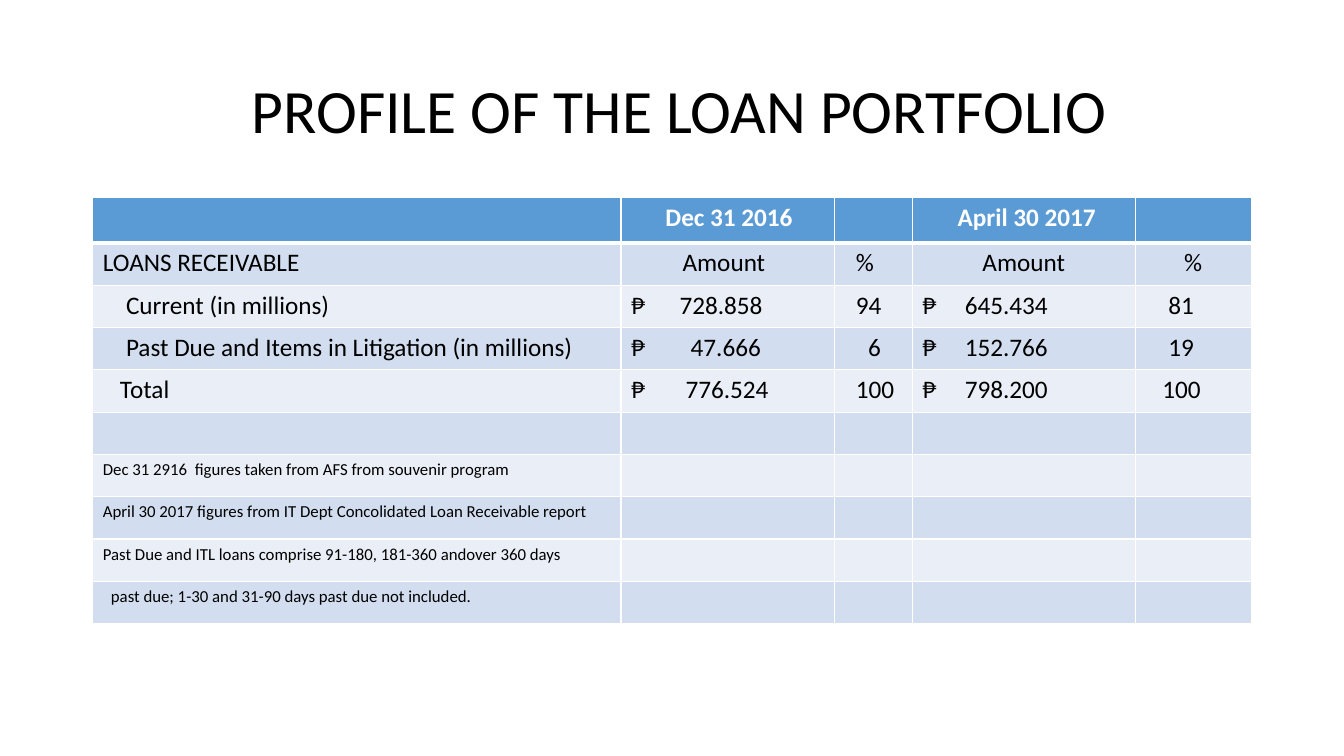
from lxml.etree import SubElement
from pptx import Presentation
from pptx.dml.color import RGBColor
from pptx.enum.text import MSO_ANCHOR, PP_ALIGN
from pptx.oxml import parse_xml
from pptx.oxml.ns import nsdecls, qn
from pptx.util import Inches, Pt

BLACK = RGBColor(0, 0, 0)
WHITE = RGBColor(255, 255, 255)
BLUE = RGBColor(0x5B, 0x9B, 0xD5)
BANDS = [RGBColor(0xEA, 0xEF, 0xF7), RGBColor(0xD2, 0xDE, 0xEF)]
LEFT, MID = PP_ALIGN.LEFT, PP_ALIGN.CENTER


def style(font, color, **look):
    for key, val in {"name": "Calibri", **look}.items():
        setattr(font, key, val)
    font.color.rgb = color


def edge(cell, spot, side, width):
    line = parse_xml(
        f'<a:ln{side} {nsdecls("a")} w="{Pt(width)}"><a:solidFill>'
        f'<a:srgbClr val="{WHITE}"/></a:solidFill></a:ln{side}>')
    cell._tc.get_or_add_tcPr().insert(spot, line)


deck = Presentation()
deck.slide_width, deck.slide_height = Inches(13.33), Inches(7.5)
slide = deck.slides.add_slide(deck.slide_layouts[5])

title = slide.shapes.title
place = {"left": 0.92, "top": 0.4, "width": 11.5, "height": 1.45}
for key, val in place.items():
    setattr(title, key, Inches(val))
frame = title.text_frame
frame.text = "PROFILE OF THE LOAN PORTFOLIO"
frame.margin_left = Inches(0.24)
frame.vertical_anchor = MSO_ANCHOR.MIDDLE
head = frame.paragraphs[0]
head.alignment, head.line_spacing = MID, 0.9
style(head.runs[0].font, BLACK, size=Pt(44))

# Each entry: text, indent or tab stop, alignment
rows = [
    [("", 0, LEFT), ("Dec 31 2016", 0.34, LEFT), ("", 0, LEFT),
     ("April 30 2017", 0.06, MID)],
    [("LOANS RECEIVABLE", 0, LEFT), ("Amount", 0.51, LEFT),
     ("%", 0.11, LEFT), ("Amount", 0, MID), ("%", 0, MID)],
    [("Current (in millions)", 0.23, LEFT), ("₱\t728.858", 0.48, LEFT),
     ("94", 0.11, LEFT), ("₱\t645.434", 0.42, LEFT), ("81", 0.23, LEFT)],
    [("Past Due and Items in Litigation (in millions)", 0.23, LEFT),
     ("₱\t47.666", 0.59, LEFT), ("6", 0.23, LEFT),
     ("₱\t152.766", 0.42, LEFT), ("19", 0.23, LEFT)],
    [("Total", 0.17, LEFT), ("₱\t776.524", 0.54, LEFT),
     ("100", 0.11, LEFT), ("₱\t798.200", 0.42, LEFT), ("100", 0.17, LEFT)],
    [],
    [("Dec 31 2916  figures taken from AFS from souvenir program", 0, LEFT)],
    [("April 30 2017 figures from IT Dept Concolidated Loan Receivable report",
      0, LEFT)],
    [("Past Due and ITL loans comprise 91-180, 181-360 andover 360 days",
      0, LEFT)],
    [("past due; 1-30 and 31-90 days past due not included.", 0.08, LEFT)],
]
widths = [5.24, 2.12, 0.77, 2.21, 1.15]
table = slide.shapes.add_table(
    len(rows), len(widths), Inches(0.92), Inches(1.96),
    Inches(11.5), Inches(4.2)).table
for col, width in zip(table.columns, widths):
    col.width = Inches(width)

for r, row in enumerate(rows):
    table.rows[r].height = Inches(0.42 if r else 0.45)
    for c in range(len(widths)):
        cell = table.cell(r, c)
        cell.fill.solid()
        cell.fill.fore_color.rgb = BANDS[r % 2] if r else BLUE
        sides = {"L": 1, "R": 1, "T": 3 if r == 1 else 1, "B": 1 if r else 3}
        for spot, (side, width) in enumerate(sides.items()):
            edge(cell, spot, side, width)
        if c >= len(row) or not row[c][0]:
            continue
        text, gap, align = row[c]
        para = cell.text_frame.paragraphs[0]
        para.alignment = align
        run = para.add_run()
        run.text = text
        style(run.font, BLACK if r else WHITE, bold=r == 0,
              size=Pt(12 if r > 5 else 18))
        props = para._p.get_or_add_pPr()
        if "\t" in text:
            tabs = SubElement(props, qn("a:tabLst"))
            SubElement(tabs, qn("a:tab"), pos=str(Inches(gap)), algn="l")
        else:
            props.set("marL", str(Inches(gap)))

deck.save("out.pptx")
